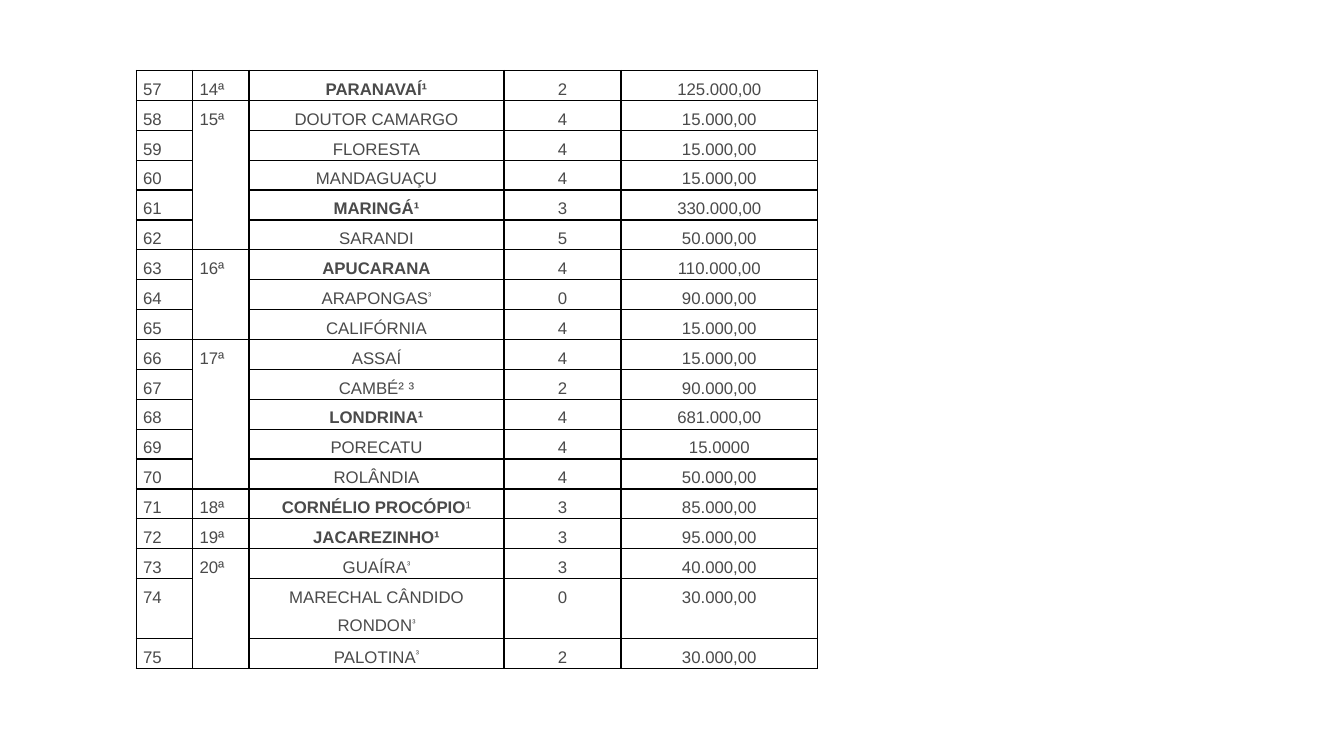
from dataclasses import dataclass

import lxml.etree
import pptx
import pptx.dml.color
import pptx.enum.text
import pptx.oxml.ns
import pptx.table
import pptx.text.text
import pptx.util

SLIDE_WIDTH = pptx.util.Inches(13.33)
SLIDE_HEIGHT = pptx.util.Inches(7.5)
TABLE_LEFT = pptx.util.Inches(1.35)
TABLE_TOP = pptx.util.Inches(0.7)
TABLE_HEIGHT = pptx.util.Inches(5.93)
COLUMN_WIDTHS = [pptx.util.Inches(width) for width in (0.56, 0.56, 2.53, 1.16, 1.95)]
CELL_MARGIN = pptx.util.Inches(0.07)
BORDER_WIDTH = pptx.util.Pt(1)

TEXT_COLOR = pptx.dml.color.RGBColor(0x4A, 0x4A, 0x4A)
BORDER_COLOR = pptx.dml.color.RGBColor(0x00, 0x00, 0x00)
CENTER = pptx.enum.text.PP_ALIGN.CENTER
JUSTIFY = pptx.enum.text.PP_ALIGN.JUSTIFY
FIRST_NUMBER = 57


@dataclass(frozen=True)
class Span:
    text: str
    bold: bool = False
    raised: bool = False


@dataclass(frozen=True)
class City:
    name: str
    count: str
    amount: str
    bold: bool = False
    note: Span | None = None
    lines: int = 1

    def name_spans(self) -> list[Span]:
        spans = [Span(self.name, self.bold)]
        return spans + [self.note] if self.note else spans


@dataclass(frozen=True)
class Region:
    label: str
    cities: tuple[City, ...]


NOTE_ONE = Span("¹")
NOTE_THREE = Span("³", raised=True)

REGIONS = (
    Region("14ª", (City("PARANAVAÍ¹", "2", "125.000,00", bold=True),)),
    Region("15ª", (
        City("DOUTOR CAMARGO", "4", "15.000,00"),
        City("FLORESTA", "4", "15.000,00"),
        City("MANDAGUAÇU", "4", "15.000,00"),
        City("MARINGÁ¹", "3", "330.000,00", bold=True),
        City("SARANDI", "5", "50.000,00"),
    )),
    Region("16ª", (
        City("APUCARANA", "4", "110.000,00", bold=True),
        City("ARAPONGAS", "0", "90.000,00", note=NOTE_THREE),
        City("CALIFÓRNIA", "4", "15.000,00"),
    )),
    Region("17ª", (
        City("ASSAÍ", "4", "15.000,00"),
        City("CAMBÉ² ³", "2", "90.000,00"),
        City("LONDRINA¹", "4", "681.000,00", bold=True),
        City("PORECATU", "4", "15.0000"),
        City("ROLÂNDIA", "4", "50.000,00"),
    )),
    Region("18ª", (
        City("CORNÉLIO PROCÓPIO", "3", "85.000,00", bold=True, note=NOTE_ONE),
    )),
    Region("19ª", (City("JACAREZINHO¹", "3", "95.000,00", bold=True),)),
    Region("20ª", (
        City("GUAÍRA", "3", "40.000,00", note=NOTE_THREE),
        City("MARECHAL CÂNDIDO RONDON", "0", "30.000,00", note=NOTE_THREE, lines=2),
        City("PALOTINA", "2", "30.000,00", note=NOTE_THREE),
    )),
)


def style_cell(cell: pptx.table._Cell) -> None:
    """Give the cell its margins, four borders and an empty fill."""
    cell.margin_left = cell.margin_right = CELL_MARGIN
    cell.margin_top = cell.margin_bottom = 0
    properties = cell._tc.get_or_add_tcPr()
    for side in ("a:lnL", "a:lnR", "a:lnT", "a:lnB"):
        line = lxml.etree.SubElement(
            properties, pptx.oxml.ns.qn(side), w=str(BORDER_WIDTH)
        )
        fill = lxml.etree.SubElement(line, pptx.oxml.ns.qn("a:solidFill"))
        lxml.etree.SubElement(
            fill, pptx.oxml.ns.qn("a:srgbClr"), val=str(BORDER_COLOR)
        )
    cell.fill.background()


def add_span(paragraph: pptx.text.text._Paragraph, span: Span) -> None:
    run = paragraph.add_run()
    run.text = span.text
    run.font.name = "Arial"
    run.font.size = pptx.util.Pt(12)
    run.font.bold = span.bold
    run.font.color.rgb = TEXT_COLOR
    if span.raised:
        run._r.get_or_add_rPr().set("baseline", "30000")


def write_cell(
    cell: pptx.table._Cell, spans: list[Span], alignment: pptx.enum.text.PP_ALIGN
) -> None:
    paragraph = cell.text_frame.paragraphs[0]
    paragraph.alignment = alignment
    paragraph.line_spacing = 1.5
    paragraph.space_after = pptx.util.Pt(10.7)
    for span in spans:
        add_span(paragraph, span)


def fill_table(table: pptx.table.Table, line_height: int) -> None:
    row = 0
    for region in REGIONS:
        first_row = row
        write_cell(table.cell(row, 1), [Span(region.label)], JUSTIFY)
        for city in region.cities:
            table.rows[row].height = line_height * city.lines
            write_cell(table.cell(row, 0), [Span(str(FIRST_NUMBER + row))], JUSTIFY)
            write_cell(table.cell(row, 2), city.name_spans(), CENTER)
            write_cell(table.cell(row, 3), [Span(city.count)], CENTER)
            write_cell(table.cell(row, 4), [Span(city.amount)], CENTER)
            row += 1
        if len(region.cities) > 1:
            table.cell(first_row, 1).merge(table.cell(row - 1, 1))


def main() -> None:
    presentation = pptx.Presentation()
    presentation.slide_width = SLIDE_WIDTH
    presentation.slide_height = SLIDE_HEIGHT
    slide = presentation.slides.add_slide(presentation.slide_layouts[6])

    cities = [city for region in REGIONS for city in region.cities]
    line_height = TABLE_HEIGHT // sum(city.lines for city in cities)
    table = slide.shapes.add_table(
        len(cities), len(COLUMN_WIDTHS),
        TABLE_LEFT, TABLE_TOP, sum(COLUMN_WIDTHS), TABLE_HEIGHT,
    ).table
    table.first_row = False
    table.horz_banding = False
    for column, width in zip(table.columns, COLUMN_WIDTHS):
        column.width = width
    for cell in table.iter_cells():
        style_cell(cell)
    fill_table(table, line_height)
    presentation.save("out.pptx")


if __name__ == "__main__":
    main()
